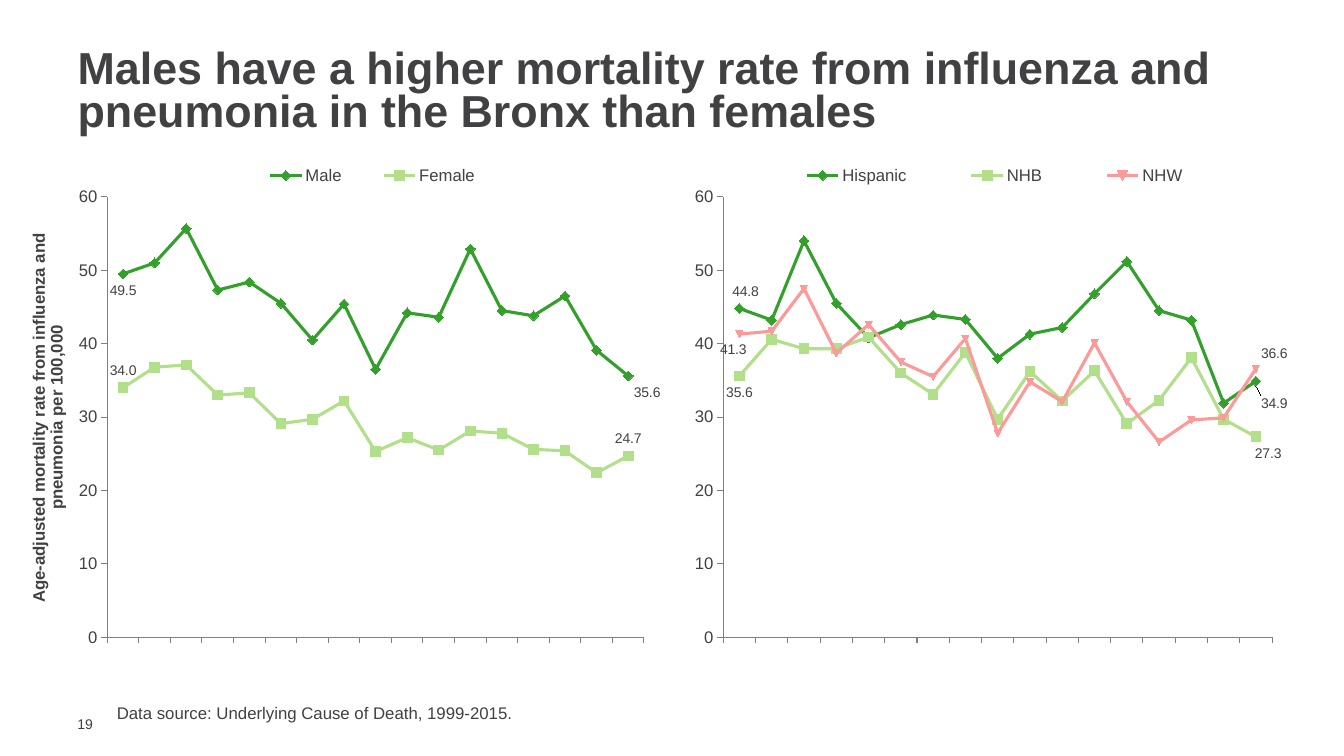
from lxml import etree
from pptx import Presentation
from pptx.chart.data import CategoryChartData
from pptx.dml.color import RGBColor
from pptx.enum import chart as ec, text as et
from pptx.oxml.ns import qn
from pptx.util import Inches, Pt

GREY = RGBColor(0x41, 0x40, 0x42)
AXIS_GREY = RGBColor(0x80, 0x80, 0x80)
GREEN = RGBColor(0x33, 0xA0, 0x2C)
LIGHT_GREEN = RGBColor(0xB2, 0xDF, 0x8A)
PINK = RGBColor(0xFB, 0x9A, 0x99)

ABOVE, BELOW = ec.XL_LABEL_POSITION.ABOVE, ec.XL_LABEL_POSITION.BELOW
YEARS = [str(year) for year in range(1999, 2016)]
# Colour and marker by series order; the third series keeps the automatic marker.
STYLES = [(GREEN, ec.XL_MARKER_STYLE.DIAMOND),
          (LIGHT_GREEN, ec.XL_MARKER_STYLE.SQUARE),
          (PINK, None)]

# Each series: name, yearly rates, then (position, x shift, y shift) of its first and last label.
BY_SEX = [
    ("Male", [49.5, 51, 55.7, 47.3, 48.4, 45.5, 40.5, 45.4, 36.5, 44.2, 43.6,
              52.9, 44.5, 43.8, 46.5, 39.1, 35.6],
     (BELOW, 0, 0), (BELOW, 0.03, 0)),
    ("Female", [34, 36.8, 37.1, 33, 33.3, 29.1, 29.7, 32.2, 25.3, 27.2, 25.5,
                28.1, 27.8, 25.6, 25.4, 22.4, 24.7],
     (ABOVE, 0, 0), (ABOVE, 0, 0)),
]
BY_ETHNICITY = [
    ("Hispanic", [44.8, 43.2, 54, 45.5, 40.8, 42.6, 43.9, 43.3, 38, 41.3, 42.2,
                  46.8, 51.2, 44.5, 43.2, 31.9, 34.9],
     (ABOVE, 0.01, 0), (BELOW, 0.03, 0.01)),
    ("NHB", [35.6, 40.6, 39.3, 39.3, 40.9, 36, 33.1, 38.8, 29.7, 36.2, 32.2,
             36.3, 29.1, 32.3, 38.1, 29.7, 27.3],
     (BELOW, 0, 0), (BELOW, 0.02, 0)),
    ("NHW", [41.3, 41.7, 47.5, 38.7, 42.6, 37.5, 35.5, 40.7, 27.8, 34.8, 32.1,
             40.1, 32.1, 26.6, 29.6, 29.9, 36.6],
     (BELOW, -0.01, 0), (ABOVE, 0.03, 0)),
]


def set_font(font, size, bold=False):
    font.color.rgb = GREY
    for attribute, value in dict(name="Arial", size=Pt(size), bold=bold).items():
        setattr(font, attribute, value)


def set_layout(parent, index, **values):
    """Give a chart part a manual layout, as its child number index."""
    for old in parent.findall(qn("c:layout")):
        parent.remove(old)
    layout = etree.Element(qn("c:layout"))
    manual = etree.SubElement(layout, qn("c:manualLayout"))
    for tag, value in values.items():
        etree.SubElement(manual, qn(f"c:{tag}")).set("val", str(value))
    parent.insert(index, layout)


def place_text(shape, box, wording, size, bold=False, **frame_format):
    shape.left, shape.top, shape.width, shape.height = map(Inches, box)
    frame = shape.text_frame
    for attribute, value in dict(word_wrap=True, **frame_format).items():
        setattr(frame, attribute, value)
    frame.text = wording
    paragraph = frame.paragraphs[0]
    paragraph.alignment = et.PP_ALIGN.LEFT
    set_font(paragraph.font, size, bold)
    return paragraph


def style_series(series, style, end_labels):
    color, marker = style
    series.smooth = False
    series.format.line.color.rgb = color
    series.format.line.width = Pt(2.25)
    if marker is not None:
        series.marker.style = marker
        series.marker.size = 7
        series.marker.format.fill.solid()
        series.marker.format.fill.fore_color.rgb = color
        series.marker.format.line.color.rgb = color
    series.data_labels.show_value = False
    for year, (position, dx, dy) in zip((0, len(YEARS) - 1), end_labels):
        label = series.points[year].data_label
        set_font(label.font, 10)
        label.position = position
        if dx or dy:
            entry = series._element.xpath(f"c:dLbls/c:dLbl[c:idx/@val='{year}']")[0]
            set_layout(entry, 1, x=dx, y=dy)


def style_axes(chart, rate_title):
    for axis in (chart.category_axis, chart.value_axis):
        axis.has_major_gridlines = False
        axis.major_tick_mark = ec.XL_TICK_MARK.OUTSIDE
        axis.minor_tick_mark = ec.XL_TICK_MARK.NONE
        axis.format.line.color.rgb = AXIS_GREY
        axis.format.line.width = Pt(0.75)
        set_font(axis.tick_labels.font, 12)
    chart.category_axis.tick_label_position = ec.XL_TICK_LABEL_POSITION.NONE
    rates = chart.value_axis
    rates.minimum_scale, rates.maximum_scale, rates.major_unit = 0, 60, 10
    rates.tick_labels.number_format = "0"
    rates.tick_labels.number_format_is_linked = False
    rates.has_title = bool(rate_title)
    if rate_title:
        rates.axis_title.text_frame.text = rate_title
        set_font(rates.axis_title.text_frame.paragraphs[0].runs[0].font, 12, True)


def add_rate_chart(slide, box, groups, plot_x, plot_w, legend_x, legend_w, rate_title=None):
    data = CategoryChartData(number_format="0.0")
    data.categories = YEARS
    for name, rates, *_ in groups:
        data.add_series(name, rates)
    chart = slide.shapes.add_chart(
        ec.XL_CHART_TYPE.LINE_MARKERS, *map(Inches, box), data).chart
    set_font(chart.font, 10)
    chart.has_title = False
    chart.plots[0].vary_by_categories = False
    style_axes(chart, rate_title)
    for series, style, group in zip(chart.plots[0].series, STYLES, groups):
        style_series(series, style, group[2:])

    chart.has_legend = True
    chart.legend.position = ec.XL_LEGEND_POSITION.TOP
    chart.legend.include_in_layout = False
    set_font(chart.legend.font, 12)
    set_layout(chart.legend._element, 1, xMode="edge", yMode="edge",
               x=legend_x, y=0.03, w=legend_w, h=0.06)
    plot_area = chart._chartSpace.xpath("c:chart/c:plotArea")[0]
    set_layout(plot_area, 0, layoutTarget="inner", xMode="edge", yMode="edge",
               x=plot_x, y=0.1, w=plot_w, h=0.82)


def add_footer(slide, left, bottom):
    source = slide.shapes.add_textbox(0, 0, 0, 0)
    place_text(source, (left + 0.39, bottom - 0.35, 9.92, 0.3),
               "Data source: Underlying Cause of Death, 1999-2015.", 12)
    number = slide.shapes.add_textbox(0, 0, 0, 0)
    place_text(number, (left, bottom - 0.17, 0.43, 0.17), "19", 10,
               vertical_anchor=et.MSO_ANCHOR.MIDDLE,
               margin_top=0, margin_right=0, margin_bottom=0)


def build_mortality_slide(deck):
    slide = deck.slides.add_slide(deck.slide_layouts[5])
    headline = place_text(
        slide.shapes.title, (0.67, 0.44, 12, 0.96),
        "Males have a higher mortality rate from influenza and pneumonia "
        "in the Bronx than females", 32, True,
        vertical_anchor=et.MSO_ANCHOR.MIDDLE, auto_size=et.MSO_AUTO_SIZE.NONE)
    headline.line_spacing = 0.8
    add_rate_chart(slide, (0.25, 1.42, 6.3, 5.33), BY_SEX, 0.13, 0.85, 0.33, 0.44,
                   "Age-adjusted mortality rate from influenza and pneumonia per 100,000")
    add_rate_chart(slide, (6.69, 1.42, 6.08, 5.33), BY_ETHNICITY, 0.08, 0.9, 0.12, 0.81)
    add_footer(slide, 0.67, 7.27)


def main():
    deck = Presentation()
    deck.slide_width, deck.slide_height = Inches(13.33), Inches(7.5)
    build_mortality_slide(deck)
    deck.save("out.pptx")


if __name__ == "__main__":
    main()
